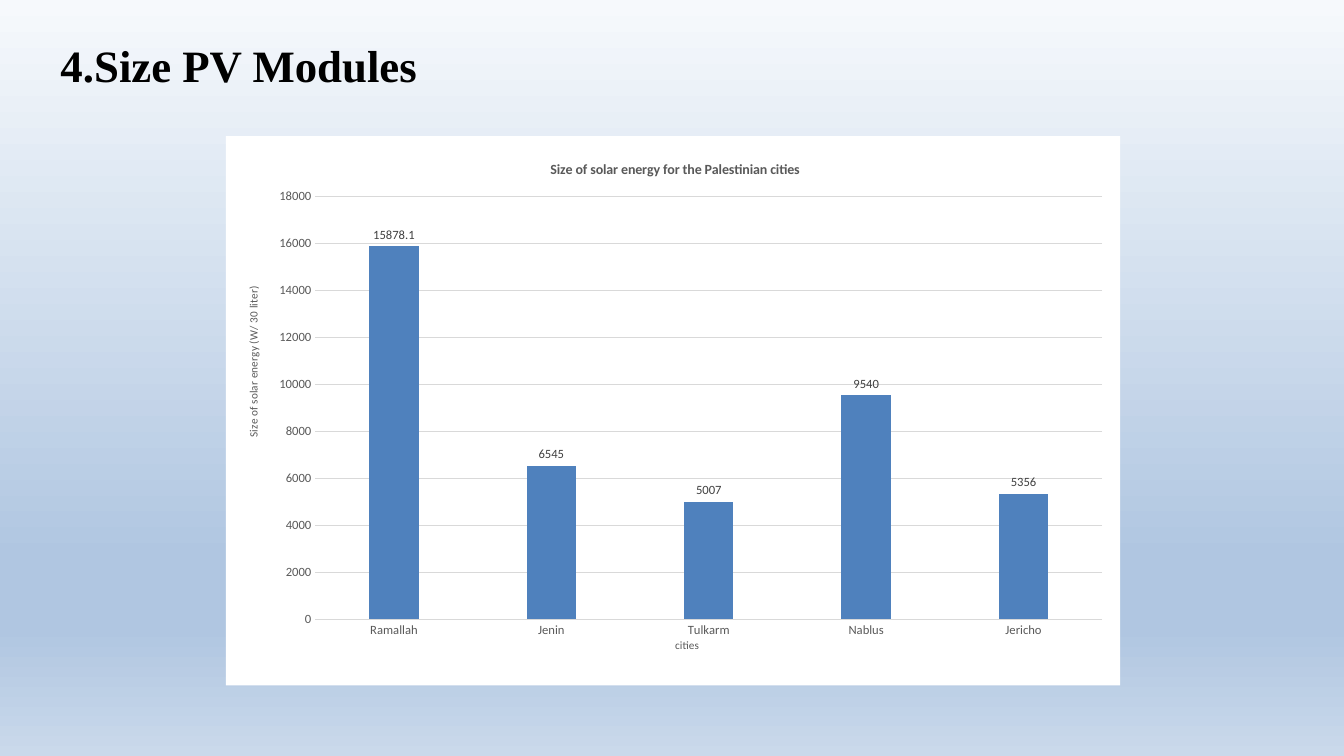
from lxml import etree
from pptx import Presentation
from pptx import util as u
from pptx.chart.data import CategoryChartData
from pptx.dml.color import RGBColor
from pptx.enum import chart as ch, text
from pptx.oxml.ns import qn

HEADING = "4.Size PV Modules"
CHART_TITLE = "Size of solar energy for the Palestinian cities"
CITY_TITLE = "cities"
ENERGY_TITLE = "Size of solar energy (W/ 30 liter)"
ENERGY = {"Ramallah": 15878.1, "Jenin": 6545, "Tulkarm": 5007,
          "Nablus": 9540, "Jericho": 5356}

BLACK = RGBColor(0x00, 0x00, 0x00)
WHITE = RGBColor(0xFF, 0xFF, 0xFF)
GREY = RGBColor(0x59, 0x59, 0x59)
DARK = RGBColor(0x40, 0x40, 0x40)
GRID = RGBColor(0xD9, 0xD9, 0xD9)
BLUE = RGBColor(0x4F, 0x81, 0xBD)
SKY = [(0, RGBColor(0xF6, 0xF9, 0xFC)), (74, RGBColor(0xB0, 0xC6, 0xE1)),
       (83, RGBColor(0xB0, 0xC6, 0xE1)), (100, RGBColor(0xCA, 0xD9, 0xEB))]

# Shares of the chart frame: left, top, width, height
PLOT_AREA = {"x": 0.10, "y": 0.11, "w": 0.88, "h": 0.77}
CHART_TITLE_AT = {"x": 0.36, "y": 0.04}
CITY_TITLE_AT = {"x": 0.5, "y": 0.91}
ENERGY_TITLE_AT = {"x": 0.02, "y": 0.27}


def paint_background(slide):
    fill = slide.background.fill
    fill.gradient()
    fill.gradient_angle = 270
    stops = slide.background._cSld.find(".//" + qn("a:gsLst"))
    for stop in list(stops):
        stops.remove(stop)
    for share, color in SKY:
        stop = etree.SubElement(stops, qn("a:gs"), pos=str(share * 1000))
        etree.SubElement(stop, qn("a:srgbClr"), val=str(color))


def place(element, shares, inner=False):
    """Give a chart part a manual layout in shares of the chart frame."""
    old = element.find(qn("c:layout"))
    if old is not None:
        element.remove(old)
    layout = etree.Element(qn("c:layout"))
    manual = etree.SubElement(layout, qn("c:manualLayout"))
    if inner:
        etree.SubElement(manual, qn("c:layoutTarget"), val="inner")
    for side in "xy":
        etree.SubElement(manual, qn(f"c:{side}Mode"), val="edge")
    for side, share in shares.items():
        etree.SubElement(manual, qn(f"c:{side}"), val=str(share))
    element.insert(0 if element.find(qn("c:tx")) is None else 1, layout)


def style(font, size, color, bold=False, name="Calibri"):
    font.name, font.size, font.bold = name, u.Pt(size), bold
    font.color.rgb = color


def write_title(title, words, size, shares, bold=False):
    r = title.text_frame.paragraphs[0].add_run()
    r.text = words
    style(r.font, size, GREY, bold)
    place(title._element, shares)


def grey_line(line):
    line.color.rgb = GRID
    line.width = u.Pt(0.75)


def add_heading(slide):
    sp = slide.shapes.title
    sp.left, sp.top, sp.width, sp.height = map(u.Inches, (0.5, 0.38, 11.5, 0.7))
    tf = sp.text_frame
    tf.vertical_anchor = text.MSO_ANCHOR.TOP
    p = tf.paragraphs[0]
    p.alignment = text.PP_ALIGN.LEFT
    p.line_spacing = 0.9
    r = p.add_run()
    r.text = HEADING
    style(r.font, 32, BLACK, True, "Times New Roman")


def add_energy_chart(slide):
    data = CategoryChartData()
    data.categories = list(ENERGY)
    data.add_series("Series 1", list(ENERGY.values()))
    frame = slide.shapes.add_chart(
        ch.XL_CHART_TYPE.COLUMN_CLUSTERED,
        *map(u.Inches, (2.24, 1.35, 8.87, 5.45)), data)
    chart = frame.chart
    style(chart.font, 10, BLACK)
    chart.has_legend = False
    write_title(chart.chart_title, CHART_TITLE, 10, CHART_TITLE_AT, True)

    cities, energy = chart.category_axis, chart.value_axis
    for axis, words, at in ((cities, CITY_TITLE, CITY_TITLE_AT),
                            (energy, ENERGY_TITLE, ENERGY_TITLE_AT)):
        write_title(axis.axis_title, words, 8, at)
        axis.major_tick_mark = ch.XL_TICK_MARK.NONE
        axis.minor_tick_mark = ch.XL_TICK_MARK.NONE
        style(axis.tick_labels.font, 9, GREY)
    grey_line(cities.format.line)
    energy.format.line.fill.background()
    grey_line(energy.major_gridlines.format.line)
    energy.minimum_scale, energy.maximum_scale = 0, 18000
    energy.major_unit = 2000

    plot = chart.plots[0]
    plot.gap_width, plot.overlap = 219, -27
    plot.vary_by_categories = False
    bars = plot.series[0]
    bars.format.fill.solid()
    bars.format.fill.fore_color.rgb = BLUE
    labels = bars.data_labels
    labels.show_value = True
    labels.position = ch.XL_LABEL_POSITION.OUTSIDE_END
    style(labels.font, 9, DARK)

    space = chart._chartSpace
    place(space.find(".//" + qn("c:plotArea")), PLOT_AREA, inner=True)
    props = etree.Element(qn("c:spPr"))
    solid = etree.SubElement(props, qn("a:solidFill"))
    etree.SubElement(solid, qn("a:srgbClr"), val=str(WHITE))
    line = etree.SubElement(props, qn("a:ln"))
    etree.SubElement(line, qn("a:noFill"))
    space.find(qn("c:chart")).addnext(props)


def main():
    prs = Presentation()
    prs.slide_width, prs.slide_height = u.Inches(13.33), u.Inches(7.5)
    slide = prs.slides.add_slide(prs.slide_layouts[5])
    paint_background(slide)
    add_heading(slide)
    add_energy_chart(slide)
    prs.save("out.pptx")


if __name__ == "__main__":
    main()
